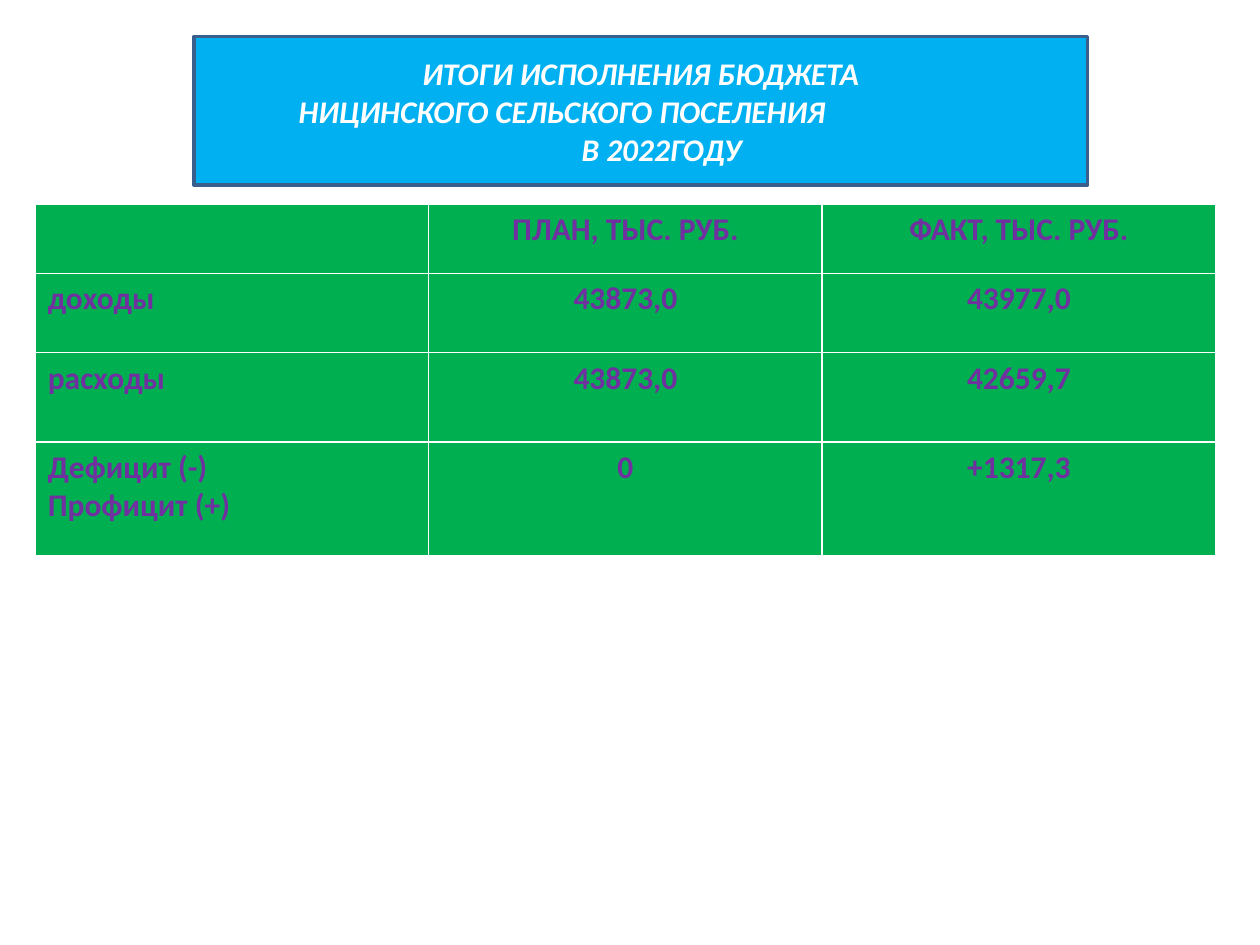
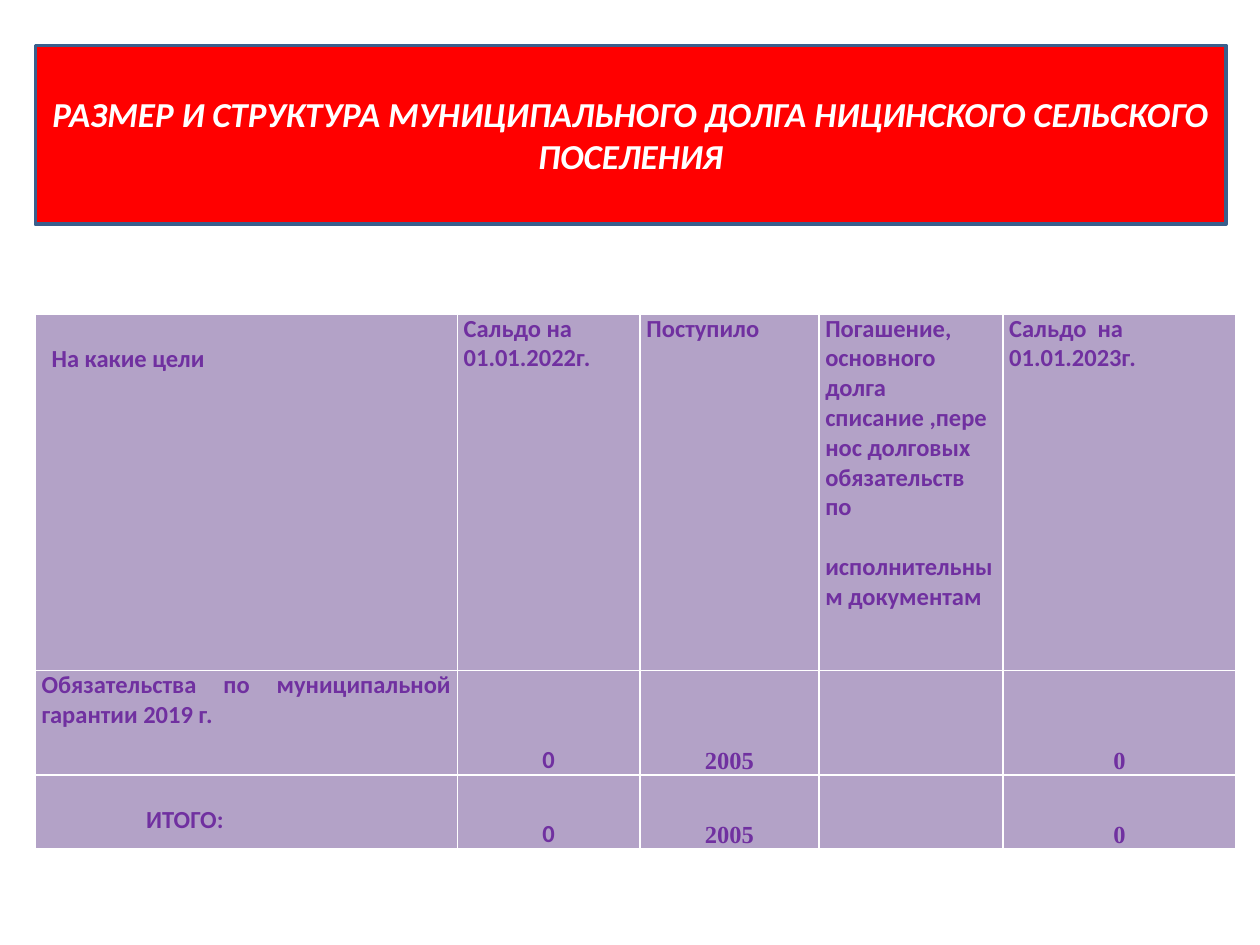
"""Build two budget slides: execution totals and municipal debt."""
import pptx
import pptx.dml.color
import pptx.enum.text
import pptx.util

ALIGN = pptx.enum.text.PP_ALIGN
ANCHOR = pptx.enum.text.MSO_ANCHOR
FONT = "Calibri"
WHITE, PURPLE, OUTLINE = "FFFFFF", "7030A0", "3A5F8C"


def percent(share, length):
    return int(length * share / 100)


def paint(colour_format, value):
    colour_format.rgb = pptx.dml.color.RGBColor.from_string(value)


presentation = pptx.Presentation()
presentation.slide_width = slide_width = pptx.util.Inches(10)
presentation.slide_height = slide_height = pptx.util.Inches(7.5)
title_only = presentation.slide_layouts[5]

pages = [
    {
        "title": "ИТОГИ ИСПОЛНЕНИЯ БЮДЖЕТА\nНИЦИНСКОГО СЕЛЬСКОГО ПОСЕЛЕНИЯ\nВ 2022ГОДУ",
        "title_box": (15.4, 3.87, 70.9, 15.73),
        "title_fill": "00B0F0",
        "title_size": 18,
        "table_top": 21.6,
        "columns": [31.23] * 3,
        "rows": [7.33, 8.4, 9.47, 12],
        "fill": "00B050",
        "size": 18,
        "cells": [
            ["", "ПЛАН, ТЫС. РУБ.", "ФАКТ, ТЫС. РУБ."],
            ["доходы", "43873,0", "43977,0"],
            ["расходы", "43873,0", "42659,7"],
            ["Дефицит (-)\nПрофицит (+)", "0", "+1317,3"],
        ],
        "compact": False,
    },
    {
        "title": "РАЗМЕР И СТРУКТУРА МУНИЦИПАЛЬНОГО ДОЛГА НИЦИНСКОГО СЕЛЬСКОГО ПОСЕЛЕНИЯ",
        "title_box": (2.8, 4.8, 94.5, 18.93),
        "title_fill": "FF0000",
        "title_size": 20,
        "table_top": 33.2,
        "columns": [33.5, 14.5, 14.2, 14.6, 18.5],
        "rows": [37.73, 11.07, 7.87],
        "fill": "B3A2C7",
        "size": 14,
        "cells": [
            ["На какие цели", "Сальдо на\n01.01.2022г.", "Поступило",
             "Погашение, основного долга списание ,перенос долговых обязательств по\nисполнительным документам",
             "Сальдо  на\n01.01.2023г."],
            ["Обязательства по муниципальной гарантии 2019 г.", "0", "2005", "", "0"],
            ["ИТОГО:", "0", "2005", "", "0"],
        ],
        "compact": True,
    },
]

tables = []
for page in pages:
    slide = presentation.slides.add_slide(title_only)
    title = slide.shapes.title
    left, top, width, height = page["title_box"]
    title.left, title.width = percent(left, slide_width), percent(width, slide_width)
    title.top, title.height = percent(top, slide_height), percent(height, slide_height)
    title.fill.solid()
    paint(title.fill.fore_color, page["title_fill"])
    paint(title.line.color, OUTLINE)
    title.line.width = pptx.util.Pt(2)
    title.text_frame.text = page["title"]
    title.text_frame.word_wrap = True
    title.text_frame.auto_size = pptx.enum.text.MSO_AUTO_SIZE.NONE
    title.text_frame.vertical_anchor = ANCHOR.MIDDLE
    for paragraph in title.text_frame.paragraphs:
        paragraph.alignment = ALIGN.CENTER
        paragraph.font.name = FONT
        paragraph.font.size = pptx.util.Pt(page["title_size"])
        paragraph.font.bold = paragraph.font.italic = True
        paint(paragraph.font.color, WHITE)

    columns, rows, compact = page["columns"], page["rows"], page["compact"]
    table = slide.shapes.add_table(
        len(rows), len(columns),
        percent(2.8, slide_width), percent(page["table_top"], slide_height),
        percent(sum(columns), slide_width), percent(sum(rows), slide_height)).table
    tables.append(table)
    table.first_row = not compact
    table.horz_banding = False
    for column, share in zip(table.columns, columns):
        column.width = percent(share, slide_width)
    for row, share in zip(table.rows, rows):
        row.height = percent(share, slide_height)

    for row_index, texts in enumerate(page["cells"]):
        for column_index, text in enumerate(texts):
            cell = table.cell(row_index, column_index)
            cell.fill.solid()
            paint(cell.fill.fore_color, page["fill"])
            cell.text = text
            is_value = column_index > 0 and (row_index > 0 or not compact)
            if compact:
                cell.margin_left = cell.margin_right = pptx.util.Inches(0.05)
                cell.margin_top = cell.margin_bottom = 0
                cell.vertical_anchor = ANCHOR.BOTTOM if is_value else ANCHOR.TOP
            for paragraph in cell.text_frame.paragraphs:
                paragraph.alignment = ALIGN.CENTER if is_value else ALIGN.LEFT
                paragraph.font.name = "Times New Roman" if compact and is_value and column_index > 1 else FONT
                paragraph.font.size = pptx.util.Pt(page["size"])
                paragraph.font.bold = True
                paint(paragraph.font.color, PURPLE)

totals_lines = presentation.slides[0].shapes.title.text_frame.paragraphs
totals_lines[1].alignment = ALIGN.LEFT
for line, indent in zip(totals_lines[1:], (0.73, 0.33)):
    line._p.get_or_add_pPr().set("marL", str(pptx.util.Inches(indent)))

debt_table = tables[1]
for row_index, indent in ((0, 0.13), (2, 0.88)):
    label = debt_table.cell(row_index, 0)
    label.margin_left = pptx.util.Inches(indent)
    label.margin_top = pptx.util.Inches(0.24)
debt_table.cell(1, 0).text_frame.paragraphs[0].alignment = ALIGN.JUSTIFY
debt_table.cell(0, 3).text_frame.paragraphs[1].space_before = pptx.util.Pt(17)

presentation.save("out.pptx")
